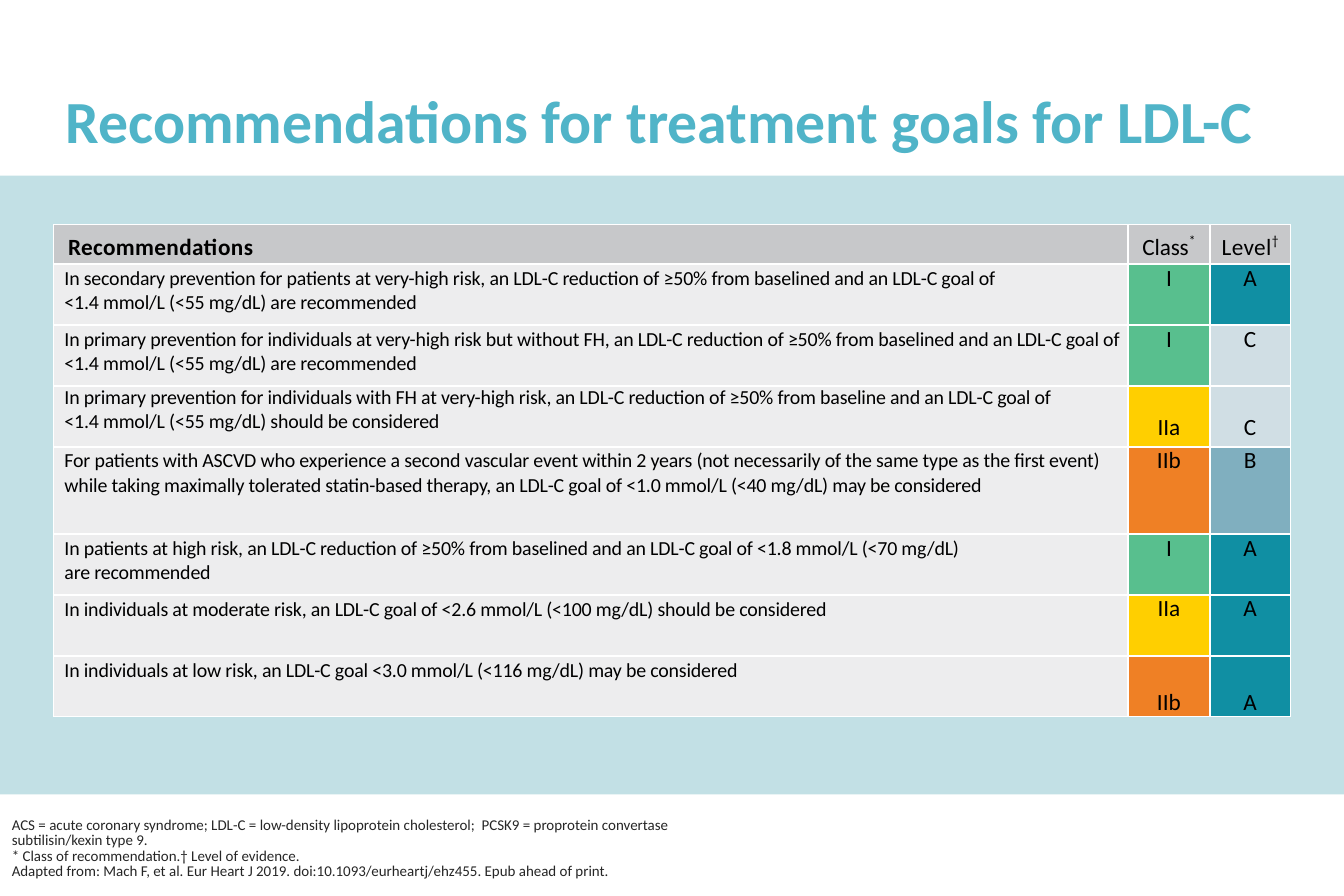
from copy import deepcopy

from lxml.etree import SubElement
from pptx import Presentation
from pptx.dml.color import RGBColor
from pptx.enum.shapes import MSO_SHAPE
from pptx.enum.text import MSO_ANCHOR, PP_ALIGN
from pptx.oxml.ns import qn
from pptx.util import Inches, Pt

CLASS_FILL = {"I": "58BF8E", "IIa": "FFCF00", "IIb": "EF8025"}
LEVEL_FILL = {"A": "108FA3", "B": "80AFBF", "C": "D0DEE4"}
TOP, BOTTOM = MSO_ANCHOR.TOP, MSO_ANCHOR.BOTTOM

HEADER = [("Recommendations", ""), ("Class", "*"), ("Level", "†")]
# recommendation, class, level, anchor of the grades, bottom margin of the grades
ROWS = [
    ("In secondary prevention for patients at very-high risk, an LDL-C reduction of ≥50% from "
     "baselined and an LDL-C goal of\n<1.4 mmol/L (<55 mg/dL) are recommended", "I", "A", TOP, 0),
    ("In primary prevention for individuals at very-high risk but without FH, an LDL-C reduction "
     "of ≥50% from baselined and an LDL-C goal of <1.4 mmol/L (<55 mg/dL) are recommended",
     "I", "C", TOP, 0),
    ("In primary prevention for individuals with FH at very-high risk, an LDL-C reduction of ≥50% "
     "from baseline and an LDL-C goal of\n<1.4 mmol/L (<55 mg/dL) should be considered",
     "IIa", "C", BOTTOM, 0.04),
    ("For patients with ASCVD who experience a second vascular event within 2 years (not "
     "necessarily of the same type as the first event) while taking maximally tolerated "
     "statin-based therapy, an LDL-C goal of <1.0 mmol/L (<40 mg/dL) may be considered",
     "IIb", "B", TOP, 0),
    ("In patients at high risk, an LDL-C reduction of ≥50% from baselined and an LDL-C goal of "
     "<1.8 mmol/L (<70 mg/dL)\nare recommended", "I", "A", TOP, 0),
    ("In individuals at moderate risk, an LDL-C goal of <2.6 mmol/L (<100 mg/dL) should be "
     "considered", "IIa", "A", TOP, 0),
    ("In individuals at low risk, an LDL-C goal <3.0 mmol/L (<116 mg/dL) may be considered",
     "IIb", "A", BOTTOM, 0),
]
FOOTNOTE = (
    "ACS = acute coronary syndrome; LDL-C = low-density lipoprotein cholesterol;  "
    "PCSK9 = proprotein convertase subtilisin/kexin type 9.\n"
    "* Class of recommendation.† Level of evidence.\n"
    "Adapted from: Mach F, et al. Eur Heart J 2019. doi:10.1093/eurheartj/ehz455. "
    "Epub ahead of print."
)


def write(p, text, size, color="000000", bold=False, align=PP_ALIGN.LEFT, spacing=0, raised=""):
    """Fill a paragraph; spacing is in hundredths of a point, raised is a superscript."""
    p.text, p.alignment = text, align
    if raised:
        p.add_run().text = raised
    for r in p.runs:
        for name, value in {"name": "Calibri", "size": Pt(size), "bold": bold}.items():
            setattr(r.font, name, value)
        r.font.color.rgb = RGBColor.from_string(color)
        r.font._element.set("spc", str(spacing))
    for br in p._p.findall(qn("a:br")):
        br.append(deepcopy(p.runs[0].font._element))
    if raised:
        p.runs[-1].font._element.set("baseline", "39000")


def style_cell(cell, fill, widths, anchor=TOP, **margins):
    """Set fill, anchor, margins in inches and white borders (left, right, top, bottom)."""
    for side in ("left", "right", "top", "bottom"):
        setattr(cell, f"margin_{side}", Inches(margins.get(side, 0)))
    cell.vertical_anchor = anchor
    tcPr = cell._tc.get_or_add_tcPr()
    for tag, width in zip(("lnL", "lnR", "lnT", "lnB"), widths):
        ln = SubElement(tcPr, qn(f"a:{tag}"), w=str(Pt(width)))
        SubElement(SubElement(ln, qn("a:solidFill")), qn("a:srgbClr"), val="FFFFFF")
    cell.fill.solid()
    cell.fill.fore_color.rgb = RGBColor.from_string(fill)


prs = Presentation()
prs.slide_width, prs.slide_height = Inches(11.25), Inches(7.5)
s = prs.slides.add_slide(prs.slide_layouts[5])

band = s.shapes.add_shape(MSO_SHAPE.RECTANGLE, 0, Inches(1.47), prs.slide_width, Inches(5.18))
band.shadow.inherit = False
band.fill.solid()
band.fill.fore_color.rgb = RGBColor.from_string("C2E0E5")
band.line.fill.background()

title = s.shapes.title
title.left, title.top, title.width, title.height = map(Inches, (0.45, 0.71, 10.36, 0.65))
footnote = s.shapes.add_textbox(0, Inches(7.07), Inches(5.91), Inches(0.34))
for sp, text, size, color, bold, line_spacing in (
    (title, "Recommendations for treatment goals for LDL-C", 36, "50B4C8", True, 0.9),
    (footnote, FOOTNOTE, 9, "262626", False, 0.85),
):
    tf = sp.text_frame
    tf.word_wrap, tf.vertical_anchor = True, BOTTOM
    write(tf.paragraphs[0], text, size, color, bold)
    tf.paragraphs[0].line_spacing = line_spacing

last_row, last_col = len(ROWS), len(HEADER) - 1
table = s.shapes.add_table(last_row + 1, last_col + 1, Inches(0.45), Inches(1.88),
                           Inches(10.36), Inches(4.11)).table
for col, width in zip(table.columns, (8.99, 0.69, 0.67)):
    col.width = Inches(width)
for row, height in zip(table.rows, (0.33, 0.51, 0.51, 0.51, 0.73, 0.51, 0.51, 0.51)):
    row.height = Inches(height)

for i in range(last_row + 1):
    for j in range(last_col + 1):
        cell = table.cell(i, j)
        p = cell.text_frame.paragraphs[0]
        align = PP_ALIGN.CENTER if j else PP_ALIGN.LEFT
        outer = (j == 0, j == last_col, i == 0, i == last_row)
        widths = [0.75 if edge else 1.5 for edge in outer]
        if i == 0:
            text, raised = HEADER[j]
            style_cell(cell, "C7C8CA", widths, top=0.07, left=0 if j else 0.12)
            write(p, text, 14, bold=j == 0, align=align, spacing=-10 if j == 1 else 20,
                  raised=raised)
            continue
        text = ROWS[i - 1][j]
        anchor, bottom = ROWS[i - 1][3:]
        if j == 0:
            style_cell(cell, "EDEDEE", widths, left=0.09, top=0 if i == 3 else 0.02)
            write(p, text, 12, spacing=-10)
        else:
            fill = (CLASS_FILL if j == 1 else LEVEL_FILL)[text]
            style_cell(cell, fill, widths, anchor, bottom=bottom)
            write(p, text, 14, align=align)

prs.save("out.pptx")
